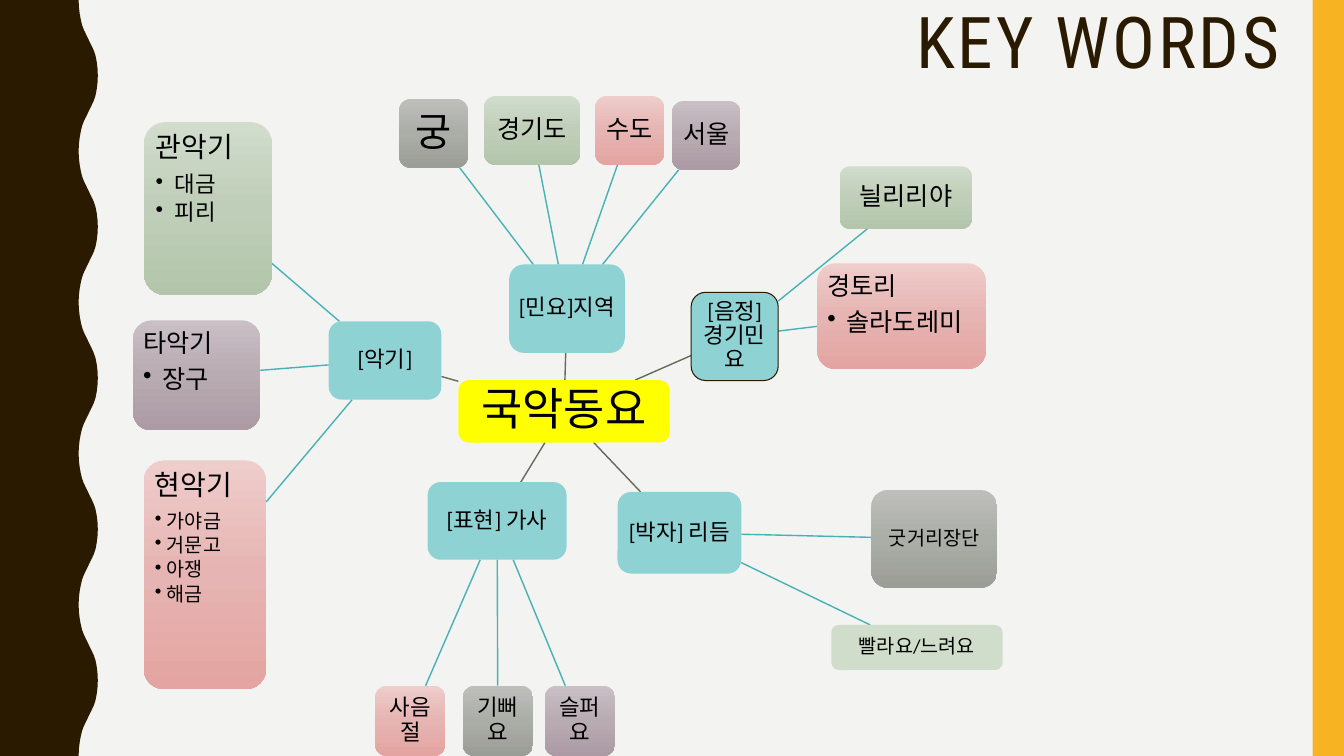
"""Build the KEY WORDS mind map slide about Korean traditional children's songs."""
from copy import deepcopy

from lxml.etree import SubElement
from pptx import Presentation
from pptx.dml.color import RGBColor
from pptx.enum.shapes import MSO_CONNECTOR, MSO_SHAPE
from pptx.enum.text import MSO_ANCHOR, MSO_AUTO_SIZE, PP_ALIGN
from pptx.oxml.ns import qn
from pptx.util import Pt

BACKGROUND = RGBColor(0xF3, 0xF3, 0xF2)
BROWN = RGBColor(0x2A, 0x1A, 0x00)
ORANGE = RGBColor(0xF8, 0xB3, 0x23)
BLACK = RGBColor(0x00, 0x00, 0x00)
YELLOW = RGBColor(0xFF, 0xFF, 0x00)
TEAL = RGBColor(0x8F, 0xD2, 0xD4)
PALE_GREEN = RGBColor(0xD1, 0xDD, 0xCB)
TRUNK_LINE = RGBColor(0x65, 0x6A, 0x59)
BRANCH_LINE = RGBColor(0x46, 0xB2, 0xB5)
GREEN = [RGBColor(0xD1, 0xDC, 0xCD), RGBColor(0xBF, 0xCE, 0xB8), RGBColor(0xB3, 0xC6, 0xAB)]
RED = [RGBColor(0xEE, 0xCD, 0xCB), RGBColor(0xE6, 0xB4, 0xB2), RGBColor(0xE4, 0xA4, 0xA1)]
PURPLE = [RGBColor(0xC9, 0xBF, 0xC5), RGBColor(0xB8, 0xAB, 0xB2), RGBColor(0xAC, 0x9A, 0xA5)]
GRAY = [RGBColor(0xBE, 0xBF, 0xBB), RGBColor(0xAB, 0xAD, 0xA7), RGBColor(0x9B, 0x9E, 0x96)]


def write_text(paragraph, text, size, font="Calibri", color=BLACK, align=PP_ALIGN.LEFT,
               after=0, spacing=0, indent=0):
    paragraph.alignment = align
    paragraph.line_spacing = 0.9
    paragraph.space_after = Pt(after)
    run = paragraph.add_run()
    run.text = text
    run.font.name = font
    run.font.size = Pt(size)
    run.font.color.rgb = color
    if spacing:
        run._r.get_or_add_rPr().set("spc", str(spacing * 100))
    if indent:
        properties = paragraph._p.get_or_add_pPr()
        properties.set("marL", str(Pt(indent)))
        properties.set("indent", str(-Pt(indent)))
        SubElement(properties, qn("a:buChar")).set("char", "•")


def border_point(box, other):
    """Return where the line between two box centres leaves the first box."""
    left, top, width, height = box
    center_x, center_y = left + width / 2, top + height / 2
    run = other[0] + other[2] / 2 - center_x
    rise = other[1] + other[3] / 2 - center_y
    scale = 1 / max(abs(run) / (width / 2), abs(rise) / (height / 2))
    return Pt(center_x + run * scale), Pt(center_y + rise * scale)


presentation = Presentation()
presentation.slide_width = Pt(960)
presentation.slide_height = Pt(540)
slide = presentation.slides.add_slide(presentation.slide_layouts[5])
slide.background.fill.solid()
slide.background.fill.fore_color.rgb = BACKGROUND

HALF_WAVE = [(56.2, 0), (56.4, 5), (57, 10), (57.8, 14.4), (58.7, 18), (59.8, 21),
             (61.2, 24), (62.7, 27), (64.1, 30), (65.6, 33), (67, 36), (68.2, 39.6),
             (69.1, 44), (69.7, 49), (69.9, 54)]
WAVE_PERIOD = 108
wave = HALF_WAVE + [(x, WAVE_PERIOD - y) for x, y in reversed(HALF_WAVE[:-1])]
edge = [(x, y + WAVE_PERIOD * turn) for turn in range(5) for x, y in wave]
builder = slide.shapes.build_freeform(0, 0, scale=Pt(1) / 100)
builder.add_line_segments([(round(x * 100), round(y * 100)) for x, y in edge] + [(0, 54000)])
curtain = builder.convert_to_shape()
stripe = slide.shapes.add_shape(MSO_SHAPE.RECTANGLE, Pt(937.6), 0, Pt(22.4), Pt(540))
for shape, color in [(curtain, BROWN), (stripe, ORANGE)]:
    shape.shadow.inherit = False
    shape.fill.solid()
    shape.fill.fore_color.rgb = color
    shape.line.fill.background()

title = slide.shapes.title
title.left, title.top, title.width, title.height = Pt(647.3), Pt(0), Pt(304.6), Pt(64.8)
title.text_frame.auto_size = MSO_AUTO_SIZE.NONE
title.text_frame.word_wrap = True
title.text_frame.vertical_anchor = MSO_ANCHOR.MIDDLE
write_text(title.text_frame.paragraphs[0], "KEY WORDS", 51, font="Roboto Condensed",
           color=BROWN, spacing=2)

ROOT = ("국악동요", (327.4, 271.5, 151, 44.6), YELLOW, 32)
BRANCHES = [
    (("[민요]지역", (363.7, 188.9, 82.6, 63.2), TEAL, 16), [
        ("경기도", (345.7, 68.6, 68.8, 49.1), GREEN, 18),
        ("수도", (425.2, 68.6, 49.1, 49.1), RED, 18),
        ("서울", (480, 72.2, 49.1, 49.1), PURPLE, 18),
        ("궁", (285.1, 70.7, 49.1, 49.1), GRAY, 28),
    ]),
    (("[음정] 경기민요", (493.7, 208.8, 62.2, 63), TEAL, 16), [
        ("늴리리야", (599.9, 118.8, 94.4, 44.6), GREEN, 18),
        ("경토리", (583.9, 188.1, 120.2, 75.4), RED, 18, ["솔라도레미"], 18, 13.7),
    ]),
    (("[박자] 리듬", (441.1, 351.4, 88.4, 58.3), TEAL, 16), [
        ("굿거리장단", (622.4, 350, 89.8, 69.8), GRAY, 14),
        ("빨라요/느려요", (593.8, 446.4, 122.4, 32.2), PALE_GREEN, 14),
    ]),
    (("[표현] 가사", (305.5, 344.4, 99.2, 55.4), TEAL, 16), [
        ("사음절", (268, 489.8, 50.2, 50.2), RED, 16),
        ("슬퍼요", (389.1, 489.8, 50.2, 50.2), PURPLE, 16),
        ("기뻐요", (330.5, 489.8, 50.2, 50.2), GRAY, 16),
    ]),
    (("[악기]", (234.8, 229.5, 80.5, 56), TEAL, 16), [
        ("관악기", (102.9, 87.2, 91.4, 123.6), GREEN, 20, ["대금", "피리"], 16, 13.7),
        ("현악기", (102.6, 328.9, 87.6, 163.4), RED, 20,
         ["가야금", "거문고", "아쟁", "해금"], 14, 8.6),
        ("타악기", (95, 228.8, 90.9, 78.6), PURPLE, 18, ["장구"], 18, 13.7),
    ]),
]

links = [(ROOT, branch, TRUNK_LINE) for branch, leaves in BRANCHES]
links += [(branch, leaf, BRANCH_LINE) for branch, leaves in BRANCHES for leaf in leaves]
for start, end, color in links:
    connector = slide.shapes.add_connector(
        MSO_CONNECTOR.STRAIGHT, *border_point(start[1], end[1]), *border_point(end[1], start[1]))
    connector.line.color.rgb = color
    connector.line.width = Pt(1)
    SubElement(connector._element.spPr, qn("a:effectLst"))

nodes = [ROOT]
for branch, leaves in BRANCHES:
    nodes += [branch, *leaves]
for label, box, color, size, *details in nodes:
    shape = slide.shapes.add_shape(MSO_SHAPE.ROUNDED_RECTANGLE, *[Pt(length) for length in box])
    shape.shadow.inherit = False
    if isinstance(color, list):
        shape.fill.gradient()
        shape.fill.gradient_angle = 270
        stop_list = shape._element.spPr.find(".//" + qn("a:gsLst"))
        stop_list.insert(1, deepcopy(stop_list[0]))
        for stop, position, stop_color in zip(shape.fill.gradient_stops, (0, 0.5, 1), color):
            stop.position = position
            stop.color.rgb = stop_color
    else:
        shape.fill.solid()
        shape.fill.fore_color.rgb = color
    if label.startswith("[음정]"):
        shape.line.color.rgb = BROWN
        shape.line.width = Pt(0.75)
    else:
        shape.line.fill.background()

    frame = shape.text_frame
    frame.word_wrap = True
    inset = Pt(0.19 * size)
    frame.margin_left = frame.margin_right = frame.margin_top = frame.margin_bottom = inset
    frame.vertical_anchor = MSO_ANCHOR.TOP if details else MSO_ANCHOR.MIDDLE
    write_text(frame.paragraphs[0], label, size, after=0.35 * size if details else 0,
               align=PP_ALIGN.LEFT if details else PP_ALIGN.CENTER)
    if details:
        items, item_size, indent = details
        for item in items:
            write_text(frame.add_paragraph(), item, item_size, after=0.15 * item_size,
                       indent=indent)

presentation.save("out.pptx")
